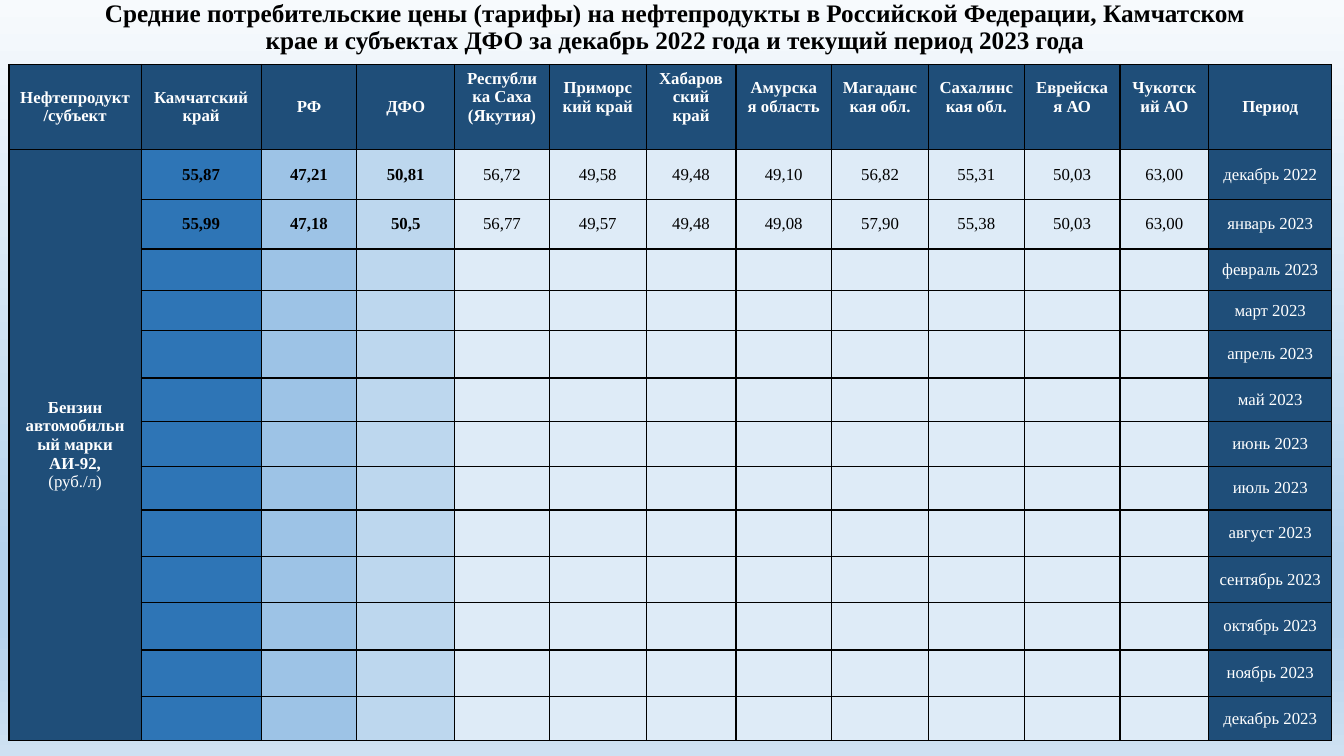
from lxml import etree
from pptx import Presentation
from pptx import util as u
from pptx.dml.color import RGBColor
from pptx.enum import text
from pptx.oxml.ns import qn

COLOURS = {
    "navy": "1F4E79", "blue": "2E75B6", "sky": "9DC3E6", "pale": "BDD7EE",
    "ice": "DEEBF7", "black": "000000", "white": "FFFFFF",
}
BACKDROP = [(0, "F7FAFD"), (74, "B5D2EC"), (83, "B5D2EC"), (100, "CEE1F2")]

TITLE = ("Средние потребительские цены (тарифы) на нефтепродукты в Российской Федерации, "
         "Камчатском крае и субъектах ДФО за декабрь 2022 года и текущий период 2023 года")
HEADINGS = ["Нефтепродукт/субъект", "Камчатский край", "РФ", "ДФО", "Республика Саха (Якутия)",
            "Приморский край", "Хабаровский край", "Амурская область", "Магаданская обл.",
            "Сахалинская обл.", "Еврейская АО", "Чукотский АО", "Период"]
PRODUCT = "Бензин автомобильный марки\nАИ-92,\n(руб./л)"
MONTHS = ["январь", "февраль", "март", "апрель", "май", "июнь", "июль", "август",
          "сентябрь", "октябрь", "ноябрь", "декабрь"]
PERIODS = ["декабрь 2022"] + [f"{month} 2023" for month in MONTHS]
PRICES = [
    "55,87 47,21 50,81 56,72 49,58 49,48 49,10 56,82 55,31 50,03 63,00".split(),
    "55,99 47,18 50,5 56,77 49,57 49,48 49,08 57,90 55,38 50,03 63,00".split(),
]
PRICE_FILLS = ["blue", "sky", "pale"] + ["ice"] * 8
COLUMN_WIDTHS = [1.31, 1.19, 0.95, 0.97, 0.94, 0.96, 0.89, 0.95, 0.96, 0.95, 0.95, 0.88, 1.22]
ROW_HEIGHTS = [0.84, 0.5, 0.49, 0.41, 0.4, 0.47, 0.43, 0.45, 0.43, 0.46, 0.46, 0.47, 0.46, 0.44]
FIRST_REGION, LAST_REGION = 4, 11


class PriceSlide:
    font = "Times New Roman"

    def __init__(self, deck):
        self.width, self.height = deck.slide_width, deck.slide_height
        self.slide = deck.slides.add_slide(deck.slide_layouts[5])

    def box(self, left, top, width, height):
        """Turn shares of the slide into lengths."""
        return (int(left * self.width), int(top * self.height),
                int(width * self.width), int(height * self.height))

    def backdrop(self, stops):
        fill = self.slide.background.fill
        fill.gradient()
        fill.gradient_angle = 270
        stop_list = self.slide.element.find(".//" + qn("a:gsLst"))
        for stop in list(stop_list):
            stop_list.remove(stop)
        for percent, colour in stops:
            stop = etree.SubElement(stop_list, qn("a:gs"), pos=str(percent * 1000))
            etree.SubElement(stop, qn("a:srgbClr"), val=colour)

    def format(self, paragraph, size, colour, bold):
        paragraph.alignment = text.PP_ALIGN.CENTER
        for run in paragraph.runs:
            run.font.name = self.font
            run.font.size = u.Pt(size)
            run.font.bold = bold
            run.font.color.rgb = RGBColor.from_string(COLOURS[colour])

    def title(self, wording, *shares):
        heading = self.slide.shapes.title
        heading.left, heading.top, heading.width, heading.height = self.box(*shares)
        frame = heading.text_frame
        frame.text = wording
        frame.word_wrap = True
        frame.auto_size = text.MSO_AUTO_SIZE.NONE
        frame.vertical_anchor = text.MSO_ANCHOR.MIDDLE
        frame.paragraphs[0].line_spacing = 0.9
        self.format(frame.paragraphs[0], 18, "black", True)

    def table(self, widths, heights, *shares):
        grid = self.slide.shapes.add_table(len(heights), len(widths), *self.box(*shares)).table
        grid.first_row = grid.horz_banding = False
        for column, width in zip(grid.columns, widths):
            column.width = u.Inches(width)
        for row, height in zip(grid.rows, heights):
            row.height = u.Inches(height)
        return grid

    def cell(self, cell, wording, fill, colour="white", bold=False):
        properties = cell._tc.get_or_add_tcPr()
        for side in "LRTB":
            border = etree.SubElement(properties, qn(f"a:ln{side}"), w=str(u.Pt(1)))
            solid = etree.SubElement(border, qn("a:solidFill"))
            etree.SubElement(solid, qn("a:srgbClr"), val=COLOURS["black"])
        cell.fill.solid()
        cell.fill.fore_color.rgb = RGBColor.from_string(COLOURS[fill])
        cell.vertical_anchor = text.MSO_ANCHOR.MIDDLE
        cell.margin_top = cell.margin_bottom = u.Inches(0.03)
        cell.text_frame.text = wording
        for paragraph in cell.text_frame.paragraphs:
            self.format(paragraph, 12, colour, bold)


def main():
    deck = Presentation()
    deck.slide_width, deck.slide_height = u.Inches(13.33), u.Inches(7.5)
    page = PriceSlide(deck)
    page.backdrop(BACKDROP)
    page.title(TITLE, 0.92 / 13.33, 0, 11.55 / 13.33, 0.55 / 7.5)
    grid = page.table(COLUMN_WIDTHS, ROW_HEIGHTS, 0.09 / 13.33, 0.64 / 7.5, 13.1 / 13.33, 6.7 / 7.5)

    for column, heading in enumerate(HEADINGS):
        cell = grid.cell(0, column)
        page.cell(cell, heading, "navy", bold=True)
        if FIRST_REGION <= column <= LAST_REGION:
            cell.margin_bottom = u.Inches(0.22)

    for row, period in enumerate(PERIODS, start=1):
        page.cell(grid.cell(row, 0), PRODUCT if row == 1 else "", "navy", bold=True)
        prices = PRICES[row - 1] if row <= len(PRICES) else [""] * len(PRICE_FILLS)
        for column, (price, fill) in enumerate(zip(prices, PRICE_FILLS), start=1):
            page.cell(grid.cell(row, column), price, fill, "black", bold=column < FIRST_REGION)
        page.cell(grid.cell(row, len(HEADINGS) - 1), period, "navy")

    product = grid.cell(1, 0)
    product.merge(grid.cell(len(PERIODS), 0))
    page.format(product.text_frame.paragraphs[-1], 12, "white", False)
    deck.save("out.pptx")


if __name__ == "__main__":
    main()
